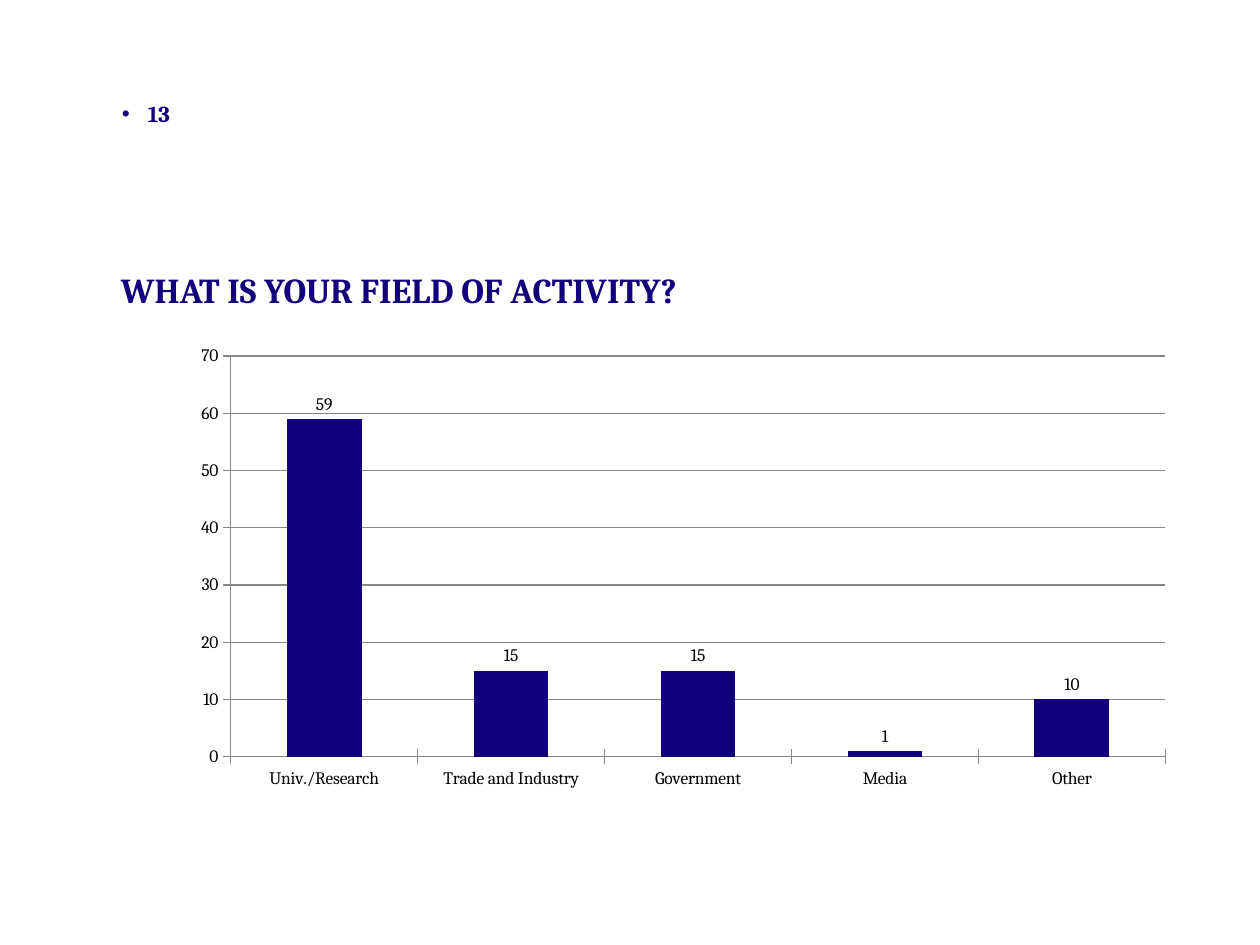
import pptx
import pptx.chart.data
import pptx.dml.color
import pptx.enum.chart
import pptx.enum.text
import pptx.oxml
import pptx.oxml.ns
import pptx.util

# Content
TITLE = "WHAT IS YOUR FIELD OF ACTIVITY?"
NUMBER = "13"
ANSWERS = {
    "Univ./Research": 59,
    "Trade and Industry": 15,
    "Government": 15,
    "Media": 1,
    "Other": 10,
}

# Places in px: left, top, width, height
PAGE_SIZE = (1260, 945)
TITLE_AREA = (121, 255, 1079, 70)
NUMBER_AREA = (122, 100, 68, 66)
CHART_AREA = (122, 341, 1087, 501)
PLOT_SHARE = {"x": 0.10, "y": 0.03, "w": 0.86, "h": 0.8}
BULLET_INDENT = 26

THEME = {
    "font": "Cambria",
    "navy": pptx.dml.color.RGBColor(0x10, 0x00, 0x7B),
    "black": pptx.dml.color.RGBColor(0, 0, 0),
    "grey": pptx.dml.color.RGBColor(0x87, 0x87, 0x87),
    "title": 20,
    "number": 13,
    "chart": 10,
}


def px(count):
    return pptx.util.Emu(round(count * 914400 / 126))


def apply(target, values):
    for name, value in values.items():
        setattr(target, name, value)


def set_font(font, size, color, bold):
    apply(font, {"name": THEME["font"], "size": pptx.util.Pt(size), "bold": bold})
    font.color.rgb = color


def fill_placeholder(box, area, text, size):
    apply(box, dict(zip(("left", "top", "width", "height"), map(px, area))))
    frame = box.text_frame
    frame.text = text
    apply(frame, {
        "margin_left": 0, "margin_top": 0, "margin_right": 0, "margin_bottom": 0,
        "word_wrap": True,
        "auto_size": pptx.enum.text.MSO_AUTO_SIZE.NONE,
        "vertical_anchor": pptx.enum.text.MSO_ANCHOR.TOP,
    })
    para = frame.paragraphs[0]
    apply(para, {"alignment": pptx.enum.text.PP_ALIGN.LEFT,
                 "space_before": pptx.util.Pt(0)})
    set_font(para.runs[0].font, size, THEME["navy"], True)
    return para


def add_bullet(para):
    props = para._p.get_or_add_pPr()
    props.set("marL", str(px(BULLET_INDENT)))
    props.set("indent", str(-px(BULLET_INDENT)))
    bullet = pptx.oxml.parse_xml(
        f'<a:buChar {pptx.oxml.ns.nsdecls("a")} char="•"/>')
    props.append(bullet)


def place_plot(chart):
    plot_area = chart._chartSpace.chart.plotArea
    for old in plot_area.findall(pptx.oxml.ns.qn("c:layout")):
        plot_area.remove(old)
    modes = "".join(f'<c:{side}Mode val="edge"/>' for side in "xy")
    shares = "".join(f'<c:{side} val="{share}"/>' for side, share in PLOT_SHARE.items())
    plot_area.insert(0, pptx.oxml.parse_xml(
        f'<c:layout {pptx.oxml.ns.nsdecls("c")}><c:manualLayout>'
        f'<c:layoutTarget val="inner"/>{modes}{shares}</c:manualLayout></c:layout>'))


def style_line(line):
    line.color.rgb = THEME["grey"]
    line.width = pptx.util.Pt(0.75)


def add_answer_chart(page):
    data = pptx.chart.data.CategoryChartData()
    data.categories = list(ANSWERS)
    data.add_series("Series 1", list(ANSWERS.values()))
    chart = page.shapes.add_chart(
        pptx.enum.chart.XL_CHART_TYPE.COLUMN_CLUSTERED,
        *map(px, CHART_AREA), data).chart
    apply(chart, {"has_legend": False, "has_title": False})
    set_font(chart.font, THEME["chart"], THEME["black"], False)
    place_plot(chart)

    # Axes and gridlines
    for axis in (chart.category_axis, chart.value_axis):
        axis.major_tick_mark = pptx.enum.chart.XL_TICK_MARK.CROSS
        style_line(axis.format.line)
    apply(chart.value_axis, {"minimum_scale": 0, "maximum_scale": 70,
                             "major_unit": 10, "has_major_gridlines": True})
    style_line(chart.value_axis.major_gridlines.format.line)

    # Columns and their values
    plot = chart.plots[0]
    apply(plot, {"gap_width": 150, "vary_by_categories": False,
                 "has_data_labels": True})
    apply(plot.data_labels, {
        "show_value": True,
        "position": pptx.enum.chart.XL_LABEL_POSITION.OUTSIDE_END})
    fill = plot.series[0].format.fill
    fill.solid()
    fill.fore_color.rgb = THEME["navy"]


def main():
    deck = pptx.Presentation()
    deck.slide_width, deck.slide_height = map(px, PAGE_SIZE)
    page = deck.slides.add_slide(deck.slide_layouts[1])

    # Heading and number
    heading = fill_placeholder(page.shapes.title, TITLE_AREA, TITLE, THEME["title"])
    heading.line_spacing = pptx.util.Pt(32)
    number = fill_placeholder(page.placeholders[1], NUMBER_AREA, NUMBER, THEME["number"])
    add_bullet(number)

    add_answer_chart(page)
    deck.save("out.pptx")


if __name__ == "__main__":
    main()
